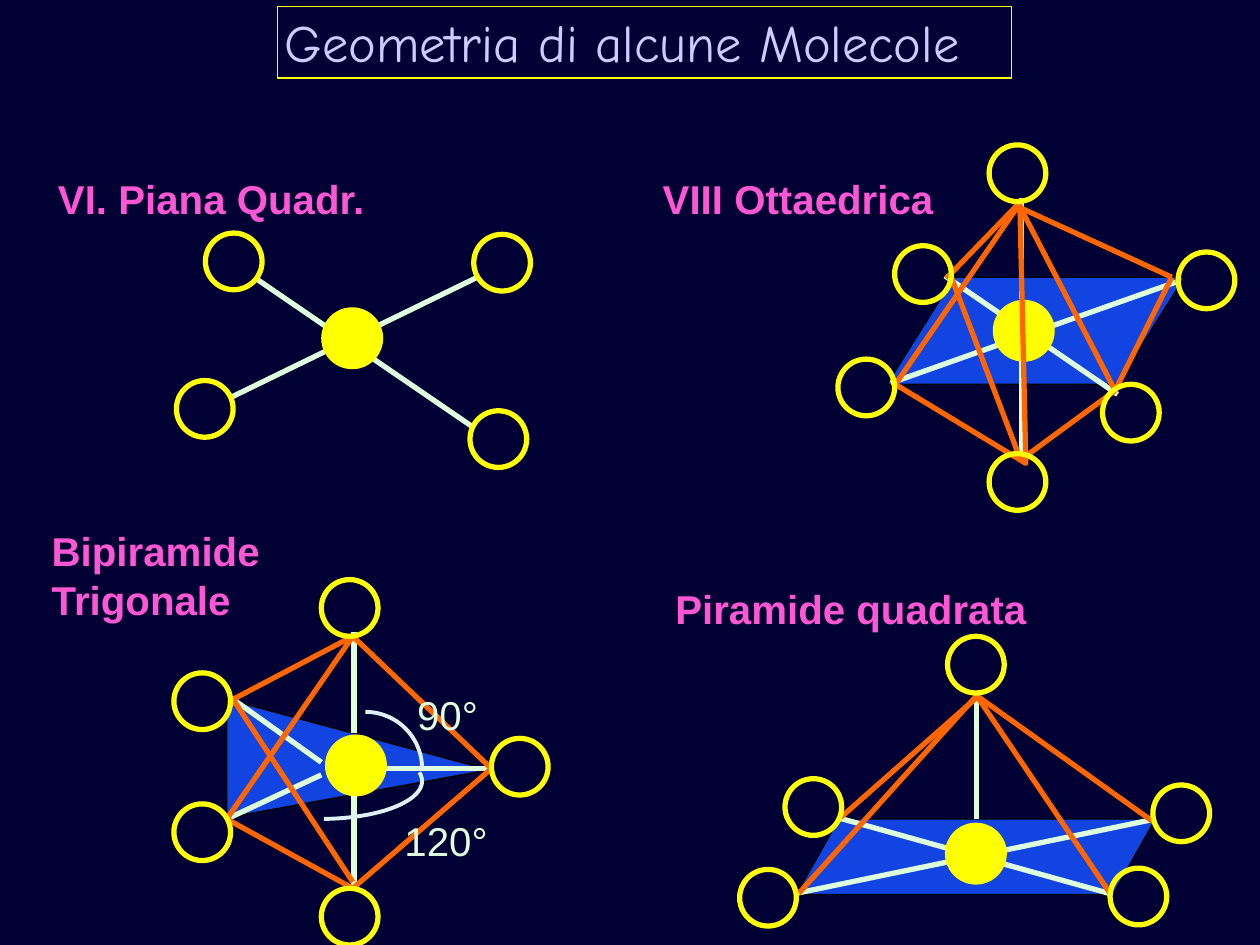
import math
from dataclasses import dataclass

from lxml import etree
from pptx import Presentation
from pptx import util as u
from pptx.dml import color
from pptx.enum import shapes, text
from pptx.oxml import ns


@dataclass(frozen=True)
class Theme:
    background: str = "000034"
    plane: str = "1244E2"
    outline: str = "000000"
    atom: str = "FFFF00"
    bond: str = "DDFFDD"
    edge: str = "FF6600"
    arc: str = "DDF1F7"
    title: str = "CCCCFF"
    heading: str = "FF57D3"
    title_font: str = "Comic Neue"
    body_font: str = "Arial"
    title_size: float = 30
    body_size: float = 23
    thin: float = 0.75
    medium: float = 2.25
    thick: float = 3
    atom_size: float = 0.45


class MoleculeSlide:
    def __init__(self, presentation, theme):
        self.theme = theme
        self.slide = presentation.slides.add_slide(presentation.slide_layouts[6])
        self.shapes = self.slide.shapes
        fill = self.slide.background.fill
        fill.solid()
        fill.fore_color.rgb = color.RGBColor.from_string(theme.background)

    def start_group(self):
        self.shapes = self.slide.shapes.add_group_shape().shapes

    def end_group(self):
        self.shapes = self.slide.shapes

    def paint(self, shape, fill, line, width):
        shape.shadow.inherit = False
        if fill:
            shape.fill.solid()
            shape.fill.fore_color.rgb = color.RGBColor.from_string(fill)
        else:
            shape.fill.background()
        shape.line.color.rgb = color.RGBColor.from_string(line)
        shape.line.width = u.Pt(width)

    def preset(self, kind, box, fill, line, width, adjustment=None, rotation=0):
        shape = self.shapes.add_shape(kind, *map(u.Inches, box))
        self.paint(shape, fill, line, width)
        if adjustment is not None:
            shape.adjustments[0] = adjustment
        shape.rotation = rotation
        return shape

    def plane(self, kind, box, adjustment, rotation=0):
        theme = self.theme
        self.preset(kind, box, theme.plane, theme.outline, theme.thin, adjustment, rotation)

    def atoms(self, *corners, fill=None):
        theme = self.theme
        for left, top in corners:
            box = (left, top, theme.atom_size, theme.atom_size)
            self.preset(shapes.MSO_SHAPE.OVAL, box, fill, theme.atom, theme.thick)

    def centre(self, left, top):
        self.atoms((left, top), fill=self.theme.atom)

    def lines(self, ends, line):
        for points in ends:
            connector = self.shapes.add_connector(
                shapes.MSO_CONNECTOR.STRAIGHT, *map(u.Inches, points))
            connector.line.color.rgb = color.RGBColor.from_string(line)
            connector.line.width = u.Pt(self.theme.thick)
            etree.SubElement(connector._element.spPr, ns.qn("a:effectLst"))

    def bonds(self, *ends):
        self.lines(ends, self.theme.bond)

    def edges(self, *ends):
        self.lines(ends, self.theme.edge)

    def arc(self, centre, radii, start, end, steps=24):
        angles = [math.radians(start + (end - start) * i / steps) for i in range(steps + 1)]
        points = [(u.Inches(centre[0] + radii[0] * math.cos(angle)),
                   u.Inches(centre[1] + radii[1] * math.sin(angle))) for angle in angles]
        builder = self.shapes.build_freeform(*points[0])
        builder.add_line_segments(points[1:], close=False)
        self.paint(builder.convert_to_shape(), None, self.theme.arc, self.theme.medium)

    def set_text(self, shape, words, font, size, ink, bold=False):
        frame = shape.text_frame
        frame.margin_left = frame.margin_right = u.Inches(0.06)
        frame.margin_top = frame.margin_bottom = u.Inches(0.03)
        frame.vertical_anchor = text.MSO_ANCHOR.TOP
        frame.text = words
        for paragraph in frame.paragraphs:
            paragraph.alignment = text.PP_ALIGN.LEFT
            paragraph.font.name = font
            paragraph.font.size = u.Pt(size)
            paragraph.font.bold = bold
            paragraph.font.color.rgb = color.RGBColor.from_string(ink)
        return frame

    def title(self, box, words):
        theme = self.theme
        shape = self.preset(shapes.MSO_SHAPE.RECTANGLE, box, None, theme.atom, theme.thin)
        frame = self.set_text(shape, words, theme.title_font, theme.title_size, theme.title)
        frame.word_wrap = True

    def label(self, box, words, ink, bold=False):
        shape = self.shapes.add_textbox(*map(u.Inches, box))
        frame = self.set_text(shape, words, self.theme.body_font, self.theme.body_size, ink, bold)
        frame.word_wrap = False
        frame.auto_size = text.MSO_AUTO_SIZE.SHAPE_TO_FIT_TEXT

    def heading(self, box, words):
        self.label(box, words, self.theme.heading, bold=True)

    def angle(self, box, words):
        self.label(box, words, self.theme.bond)


def square_planar(page):
    page.heading((0.4, 1.35, 2.58, 0.45), "VI. Piana Quadr.")
    page.bonds((1.82, 3.16, 3.79, 2.2), (2.03, 2.21, 3.74, 3.38))
    page.centre(2.57, 2.46)
    page.atoms((1.63, 1.85), (1.4, 3.02), (3.76, 1.86), (3.73, 3.26))


def octahedral(page):
    page.heading((5.2, 1.35, 2.29, 0.45), "VIII Ottaedrica")
    page.start_group()
    page.plane(shapes.MSO_SHAPE.PARALLELOGRAM, (7.04, 2.2, 2.36, 0.85), 0.627)
    page.bonds((8.11, 2.37, 8.11, 1.57), (7.07, 3.04, 9.33, 2.24),
               (7.5, 2.19, 8.87, 3.13), (8.11, 3.63, 8.11, 2.82))
    page.centre(7.9, 2.4)
    page.preset(shapes.MSO_SHAPE.ISOSCELES_TRIANGLE, (7.47, 1.75, 1.21, 1.74),
                None, page.theme.edge, page.theme.thick, 0.083, 31.2)
    page.edges((8.1, 1.65, 8.85, 3.1), (8.1, 1.65, 9.3, 2.2), (8.85, 3.1, 9.3, 2.2),
               (7.51, 2.21, 8.1, 1.6), (7.55, 2.2, 8.1, 3.65), (8.1, 3.65, 8.85, 3.1))
    page.atoms((6.65, 2.85), (7.1, 1.95), (7.85, 1.15),
               (7.85, 3.6), (8.75, 3.05), (9.35, 2))
    page.end_group()


def trigonal_bipyramid(page):
    top, bottom, right = (2.8, 5.05), (2.8, 7.05), (3.9, 6.1)
    upper_left, lower_left = (1.85, 5.55), (1.8, 6.5)
    page.plane(shapes.MSO_SHAPE.ISOSCELES_TRIANGLE, (2.37, 4.98, 0.94, 2.08), 0.596, 90)
    page.heading((0.35, 4.15, 1.79, 0.83), "Bipiramide\nTrigonale")
    page.bonds((3.05, 6.1) + right, (2.81, 5.82, 2.81, 5.02), (2.81, 7.07, 2.81, 6.27),
               upper_left + (2.55, 6.05), lower_left + (2.55, 6.15))
    page.centre(2.6, 5.85)
    page.edges(top + lower_left, lower_left + bottom, bottom + right,
               top + right, top + upper_left, upper_left + (2.8, 7))
    page.atoms((2.55, 4.6), (2.55, 7.05), (1.38, 6.38), (1.38, 5.34), (3.9, 5.86))
    page.arc((2.55, 6.2), (0.8, 0.3), 88.5, -13.5)
    page.angle((3.15, 6.45, 0.79, 0.45), "120°")
    page.angle((3.25, 5.45, 0.61, 0.45), "90°")
    page.arc((2.9, 6.1), (0.45, 0.45), -90, 0)


def square_pyramid(page):
    apex = (7.75, 5.52)
    page.plane(shapes.MSO_SHAPE.PARALLELOGRAM, (6.32, 6.5, 2.85, 0.6), 0.564)
    page.heading((5.3, 4.61, 2.94, 0.45), "Piramide quadrata")
    page.bonds((7.75, 6.5, 7.75, 5.51), (6.32, 7.09, 9.17, 6.5), (6.65, 6.49, 8.8, 7.09))
    page.centre(7.52, 6.55)
    page.edges((6.34, 7.09, 7.77, 5.5), (6.67, 6.49, 7.77, 5.52),
               (9.15, 6.52) + apex, (8.81, 7.09) + apex)
    page.atoms((7.52, 5.05), (6.23, 6.18), (5.87, 6.9), (8.81, 6.89), (9.15, 6.23))


def main():
    presentation = Presentation()
    presentation.slide_width = u.Inches(10)
    presentation.slide_height = u.Inches(7.5)
    page = MoleculeSlide(presentation, Theme())
    page.title((2.2, 0.05, 5.83, 0.57), "Geometria di alcune Molecole")
    for draw in (square_planar, octahedral, trigonal_bipyramid, square_pyramid):
        draw(page)
    presentation.save("out.pptx")


if __name__ == "__main__":
    main()
